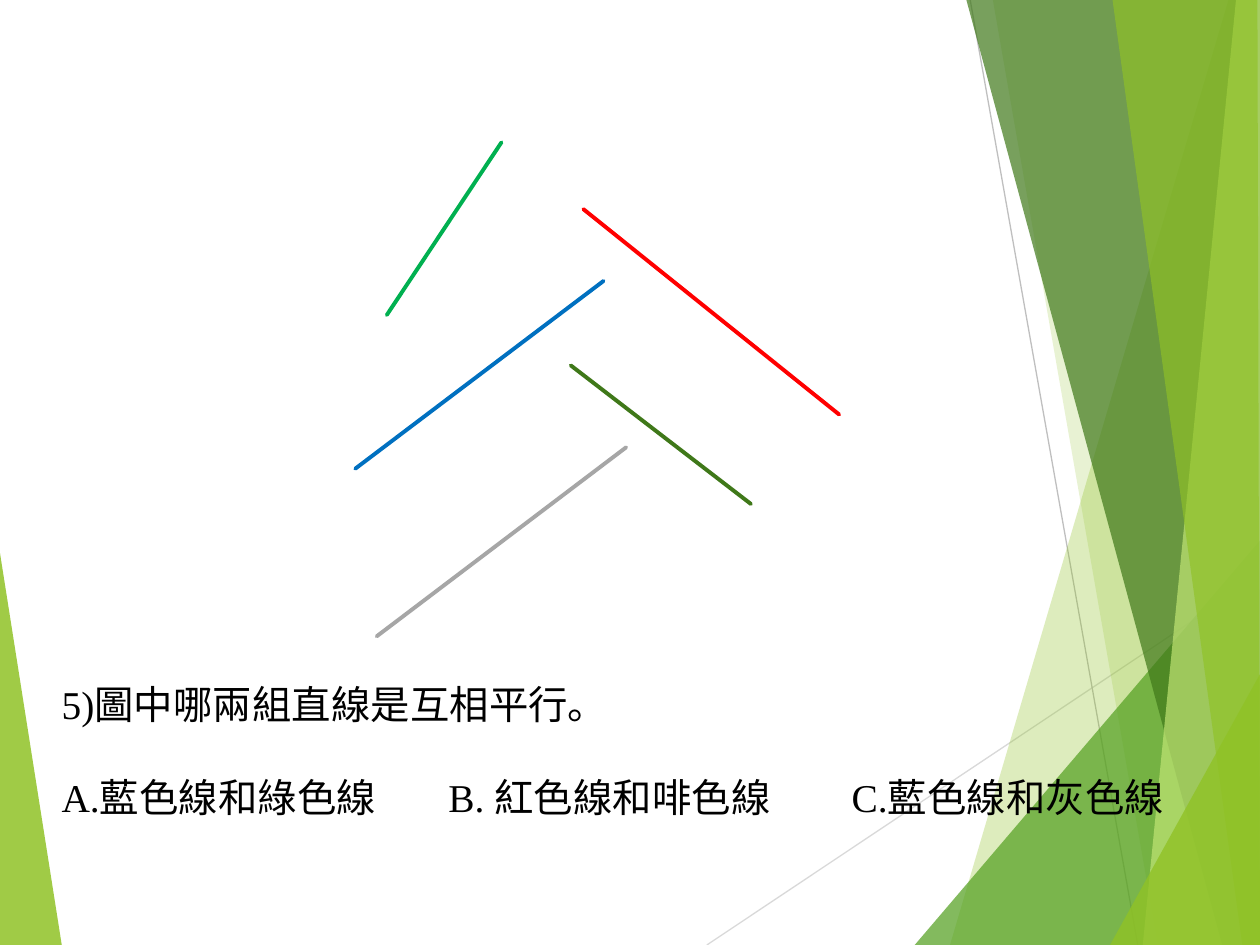
import pptx
import pptx.dml.color
import pptx.enum.shapes
import pptx.enum.text
import pptx.util
from lxml import etree
from pptx.oxml.ns import qn

# The slide is a grid of 10 columns by 7.5 rows of square cells
COLUMNS, ROWS = 10, 7.5
CELL = pptx.util.Inches(1)
INK = "000000"

LEFT_WEDGE = [(0, 4.39), (0.49, ROWS), (0, ROWS)]
RIGHT_FACETS = [  # corners, colour, opacity in percent
    ([(9.75, 0), (7.54, ROWS), (COLUMNS, ROWS), (COLUMNS, 0)], "90C226", 30),
    ([(7.88, 0), (9.19, ROWS), (COLUMNS, ROWS), (COLUMNS, 0)], "90C226", 20),
    ([(7.26, ROWS), (COLUMNS, 4.29), (COLUMNS, ROWS)], "54A021", 72),
    ([(7.67, 0), (9.7, ROWS), (COLUMNS, ROWS), (COLUMNS, 0)], "3F7819", 70),
    ([(9.81, 0), (9.07, ROWS), (COLUMNS, ROWS), (COLUMNS, 0)], "C0E474", 70),
    ([(8.83, 0), (9.86, ROWS), (COLUMNS, ROWS), (9.98, 0)], "90C226", 65),
    ([(8.81, ROWS), (COLUMNS, 5.35), (COLUMNS, ROWS)], "90C226", 80),
]
HAIRLINES = [
    ((5.61, ROWS), (COLUMNS, 4.57), "D9D9D9"),
    ((7.7, 0), (9.03, ROWS), "BFBFBF"),
]
QUESTION_LINES = [
    ((4.63, 1.66), (6.66, 3.29), "FF0000"),
    ((2.82, 3.72), (4.79, 2.23), "0070C0"),
    ((3.07, 2.5), (3.98, 1.13), "00B050"),
    ((4.53, 2.9), (5.96, 4), "3F7819"),
    ((2.99, 5.05), (4.97, 3.55), "A6A6A6"),
]
QUESTION = "5)圖中哪兩組直線是互相平行。"
ANSWERS = ["A.藍色線和綠色線", "B. 紅色線和啡色線", "C.藍色線和灰色線"]
ANSWER_STOPS = [3.07, 6.27]


def cells(count):
    return round(count * CELL)


def paint(color_format, hex_color):
    color_format.rgb = pptx.dml.color.RGBColor.from_string(hex_color)


def add_facet(slide, corners, color, opacity):
    points = [(cells(x), cells(y)) for x, y in corners]
    builder = slide.shapes.build_freeform(*points[0], scale=1.0)
    builder.add_line_segments(points[1:], close=True)
    facet = builder.convert_to_shape()
    facet.shadow.inherit = False
    facet.line.fill.background()
    facet.fill.solid()
    paint(facet.fill.fore_color, color)
    tint = facet.fill._xPr.find(qn("a:solidFill"))[0]
    etree.SubElement(tint, qn("a:alpha"), val=str(opacity * 1000))


def add_line(slide, start, end, color, width, cap="flat"):
    line = slide.shapes.add_connector(
        pptx.enum.shapes.MSO_CONNECTOR.STRAIGHT,
        *(cells(value) for value in start + end))
    line.line.width = pptx.util.Pt(width)
    paint(line.line.color, color)
    line.line._get_or_add_ln().set("cap", cap)
    etree.SubElement(line._element.spPr, qn("a:effectLst"))


def set_tab_stops(paragraph, stops):
    tabs = etree.Element(qn("a:tabLst"))
    for stop in stops:
        etree.SubElement(tabs, qn("a:tab"), pos=str(cells(stop)), algn="l")
    # Tab stops come after the spacing already set
    paragraph._p.get_or_add_pPr().insert_element_before(tabs, "a:defRPr", "a:extLst")


def add_question(slide):
    frame = slide.shapes.add_textbox(
        cells(0.39), cells(5.35), cells(9.61), cells(1.24)).text_frame
    frame.word_wrap = True
    frame.auto_size = pptx.enum.text.MSO_AUTO_SIZE.SHAPE_TO_FIT_TEXT
    frame.text = "\n".join([QUESTION, "\t".join(ANSWERS)])
    for paragraph in frame.paragraphs:
        paragraph.font.size = pptx.util.Pt(22.5)
        paragraph.font.name = "Times New Roman"
        paint(paragraph.font.color, INK)
    answers = frame.paragraphs[1]
    answers.space_before = pptx.util.Pt(26)
    set_tab_stops(answers, ANSWER_STOPS)


def main():
    deck = pptx.Presentation()
    deck.slide_width, deck.slide_height = cells(COLUMNS), cells(ROWS)
    slide = deck.slides.add_slide(deck.slide_layouts[6])

    # Background decoration
    add_facet(slide, LEFT_WEDGE, "90C226", 85)
    for start, end, color in HAIRLINES:
        add_line(slide, start, end, color, 0.75)
    for corners, color, opacity in RIGHT_FACETS:
        add_facet(slide, corners, color, opacity)

    # Lines to compare, then the question about them
    for start, end, color in QUESTION_LINES:
        add_line(slide, start, end, color, 2.25, cap="rnd")
    add_question(slide)

    deck.save("out.pptx")


if __name__ == "__main__":
    main()
